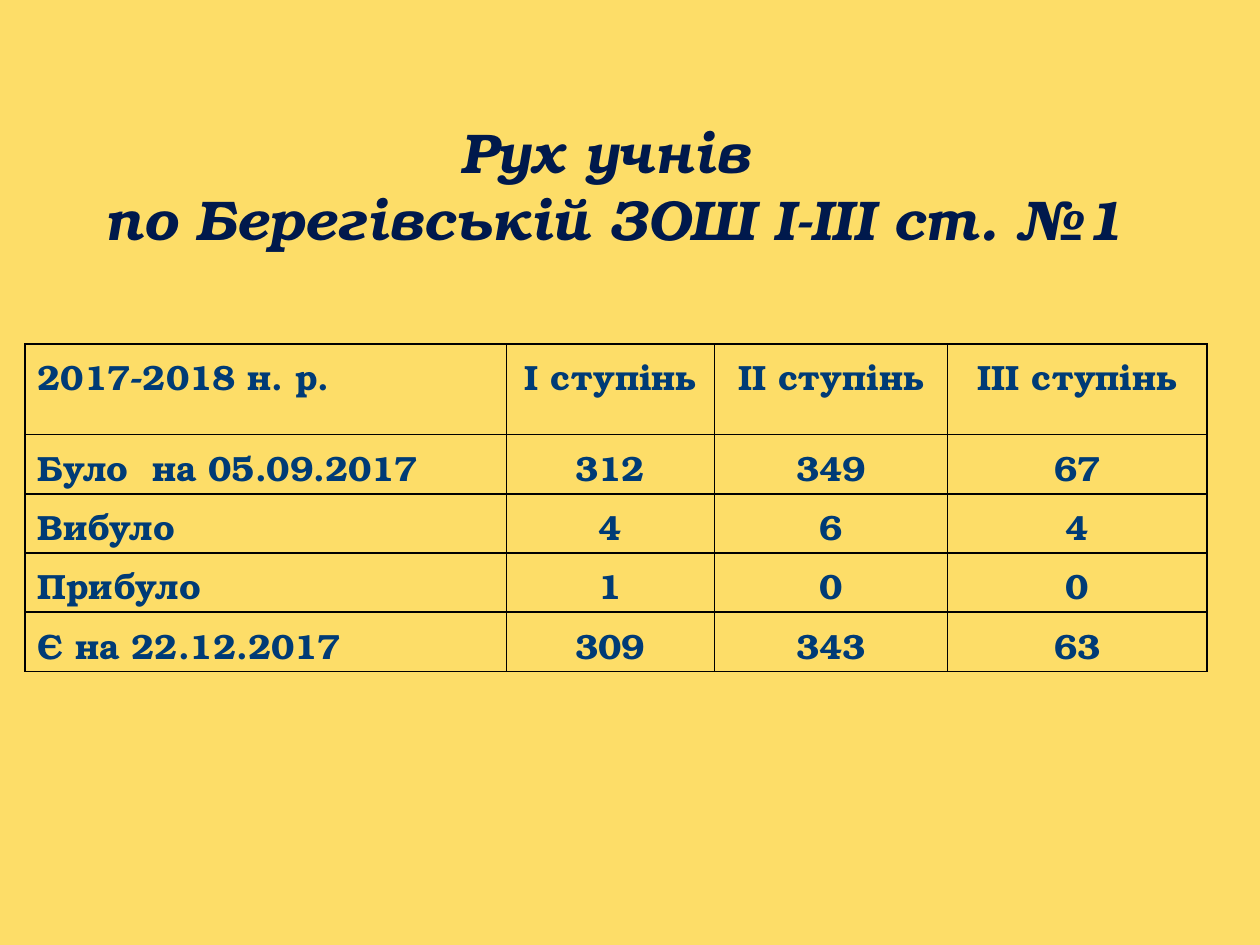
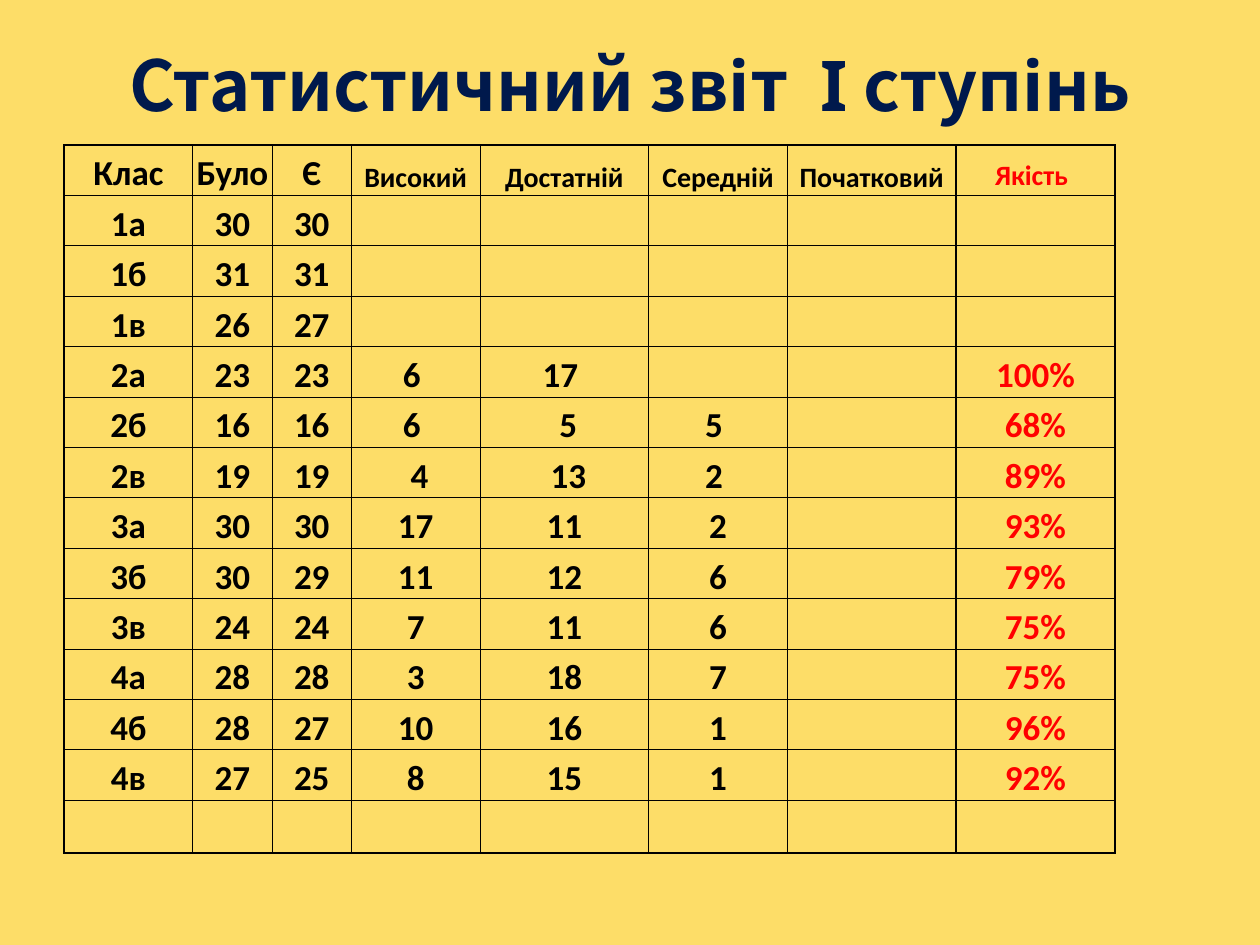
from dataclasses import dataclass

from lxml.etree import SubElement
from pptx import Presentation
from pptx.dml.color import RGBColor as RGB
from pptx.enum.text import MSO_ANCHOR as ANCHOR, PP_ALIGN as ALIGN
from pptx.oxml.ns import qn
from pptx.util import Inches, Pt

WIDTH, HEIGHT = Inches(10), Inches(7.5)
COLS, ROWS = 1000, 750
COLORS = {
    "background": "FDDD68",
    "title": "00194C",
    "movement": "003B76",
    "report": "000000",
    "quality": "FF0000",
    "border": "000000",
}


@dataclass(frozen=True)
class Font:
    name: str
    size: int
    color: str
    italic: bool = False


@dataclass(frozen=True)
class Box:
    col: int
    row: int
    cols: int
    rows: int


@dataclass(frozen=True)
class Title:
    box: Box
    lines: tuple
    font: Font


@dataclass(frozen=True)
class Grid:
    col: int
    row: int
    widths: tuple
    heights: tuple
    font: Font
    records: list
    thin: float = 1
    heavy_cols: tuple = ()
    heavy_rows: tuple = ()
    margins: tuple = (10, 5, 10, 5)
    anchor: ANCHOR = ANCHOR.TOP
    left_cols: tuple = ()
    hanging: int = 0
    space_before: float = 0


MOVEMENT_FONT = Font("TeX Gyre Bonum", 20, "movement")
REPORT_FONT = Font("Calibri", 20, "report")
HEADING_FONT = Font("Calibri", 16, "report")
QUALITY_FONT = Font("Calibri", 20, "quality")
QUALITY_HEADING_FONT = Font("Calibri", 16, "quality")
QUALITY_COL = 7

MOVEMENT_TITLE = Title(
    Box(0, 52, 976, 189),
    ("Рух учнів ", "по Берегівській ЗОШ І-ІІІ ст. №1"),
    Font("TeX Gyre Bonum", 32, "title", italic=True),
)
MOVEMENT = Grid(
    20, 273, (382, 165, 185, 206), (72,) + (47,) * 4, MOVEMENT_FONT,
    [
        ("2017-2018 н. р.", "І ступінь", "ІІ ступінь", "ІІІ ступінь"),
        ("Було  на 05.09.2017", "312", "349", "67"),
        ("Вибуло", "4", "6", "4"),
        ("Прибуло", "1", "0", "0"),
        ("Є на 22.12.2017", "309", "343", "63"),
    ],
    left_cols=(0,), hanging=38, space_before=5.75,
)

REPORT_TITLE = Title(
    Box(0, 25, 1000, 83),
    ("Статистичний звіт  І ступінь",),
    Font("Noto Sans CJK KR", 40, "title"),
)
REPORT = Grid(
    51, 115, (102, 63, 63, 102, 134, 110, 134, 126), (40,) * 13 + (42,), REPORT_FONT,
    [
        ("Клас", "Було", "Є", "Високий", "Достатній", "Середній", "Початковий", "Якість "),
        ("1а", "30", "30", "", "", "", "", ""),
        ("1б", "31", "31", "", "", "", "", ""),
        ("1в", "26", "27", "", "", "", "", ""),
        ("2а", "23", "23", "6 ", "17 ", "", "", "100%"),
        ("2б", "16", "16", "6 ", " 5", "5 ", "", "68%"),
        ("2в", "19", "19", " 4", " 13", "2 ", "", "89%"),
        ("3а", "30", "30", "17", "11", "2", "", "93%"),
        ("3б", "30", "29", "11", "12", "6", "", "79%"),
        ("3в", "24", "24", "7", "11", "6", "", "75%"),
        ("4а", "28", "28", "3", "18", "7", "", "75%"),
        ("4б", "28", "27", "10", "16", "1", "", "96%"),
        ("4в", "27", "25", "8", "15", "1", "", "92%"),
        ("",) * 8,
    ],
    thin=0.5, heavy_cols=(0, 7, 8), heavy_rows=(0, 14),
    margins=(1, 1, 1, 0), anchor=ANCHOR.BOTTOM,
)


def across(cols: int) -> int:
    return WIDTH * cols // COLS


def down(rows: int) -> int:
    return HEIGHT * rows // ROWS


def add_run(p, text: str, font: Font) -> None:
    r = p.add_run()
    r.text = text
    r.font.name = font.name
    r.font.size = Pt(font.size)
    r.font.bold = True
    r.font.italic = font.italic
    r.font.color.rgb = RGB.from_string(COLORS[font.color])


def add_title(slide, title: Title) -> None:
    box = title.box
    sp = slide.shapes.add_textbox(across(box.col), down(box.row), across(box.cols), down(box.rows))
    tf = sp.text_frame
    tf.word_wrap = True
    tf.vertical_anchor = ANCHOR.MIDDLE
    p = tf.paragraphs[0]
    p.alignment = ALIGN.CENTER
    for i, line in enumerate(title.lines):
        if i:
            p.add_line_break()
        add_run(p, line, title.font)


def set_borders(cell, grid: Grid, row: int, col: int) -> None:
    heavy = {
        "L": col in grid.heavy_cols,
        "R": col + 1 in grid.heavy_cols,
        "T": row in grid.heavy_rows,
        "B": row + 1 in grid.heavy_rows,
    }
    tc_pr = cell._tc.get_or_add_tcPr()
    for side, is_heavy in heavy.items():
        ln = SubElement(tc_pr, qn(f"a:ln{side}"), w=str(Pt(1 if is_heavy else grid.thin)))
        fill = SubElement(ln, qn("a:solidFill"))
        SubElement(fill, qn("a:srgbClr"), val=COLORS["border"])


def cell_runs(grid: Grid, row: int, col: int) -> list:
    text = grid.records[row][col]
    if grid is not REPORT or col < 3:
        return [(text, grid.font)]
    if col < QUALITY_COL:
        return [(text, REPORT_FONT if row else HEADING_FONT)]
    if row:
        return [(text, QUALITY_FONT)]
    return [(text.rstrip(), QUALITY_HEADING_FONT), (" ", QUALITY_FONT)]


def fill_cell(cell, grid: Grid, row: int, col: int) -> None:
    left, top, right, bottom = grid.margins
    cell.margin_left, cell.margin_right = across(left), across(right)
    cell.margin_top, cell.margin_bottom = down(top), down(bottom)
    cell.vertical_anchor = grid.anchor
    set_borders(cell, grid, row, col)
    cell.fill.background()
    p = cell.text_frame.paragraphs[0]
    p.alignment = ALIGN.LEFT if col in grid.left_cols else ALIGN.CENTER
    p.space_before = Pt(grid.space_before)
    if grid.hanging:
        p_pr = p._p.get_or_add_pPr()
        p_pr.set("marL", str(across(grid.hanging)))
        p_pr.set("indent", str(-across(grid.hanging)))
    for text, font in cell_runs(grid, row, col):
        if text:
            add_run(p, text, font)


def add_grid(slide, grid: Grid) -> None:
    table = slide.shapes.add_table(
        len(grid.heights), len(grid.widths), across(grid.col), down(grid.row),
        across(sum(grid.widths)), down(sum(grid.heights)),
    ).table
    table.first_row = table.horz_banding = False
    for column, width in zip(table.columns, grid.widths):
        column.width = across(width)
    for row, height in enumerate(grid.heights):
        table.rows[row].height = down(height)
        for col in range(len(grid.widths)):
            fill_cell(table.cell(row, col), grid, row, col)


def main() -> None:
    prs = Presentation()
    prs.slide_width, prs.slide_height = WIDTH, HEIGHT
    for title, grid in ((MOVEMENT_TITLE, MOVEMENT), (REPORT_TITLE, REPORT)):
        slide = prs.slides.add_slide(prs.slide_layouts[6])
        fill = slide.background.fill
        fill.solid()
        fill.fore_color.rgb = RGB.from_string(COLORS["background"])
        add_title(slide, title)
        add_grid(slide, grid)
    prs.save("out.pptx")


if __name__ == "__main__":
    main()
